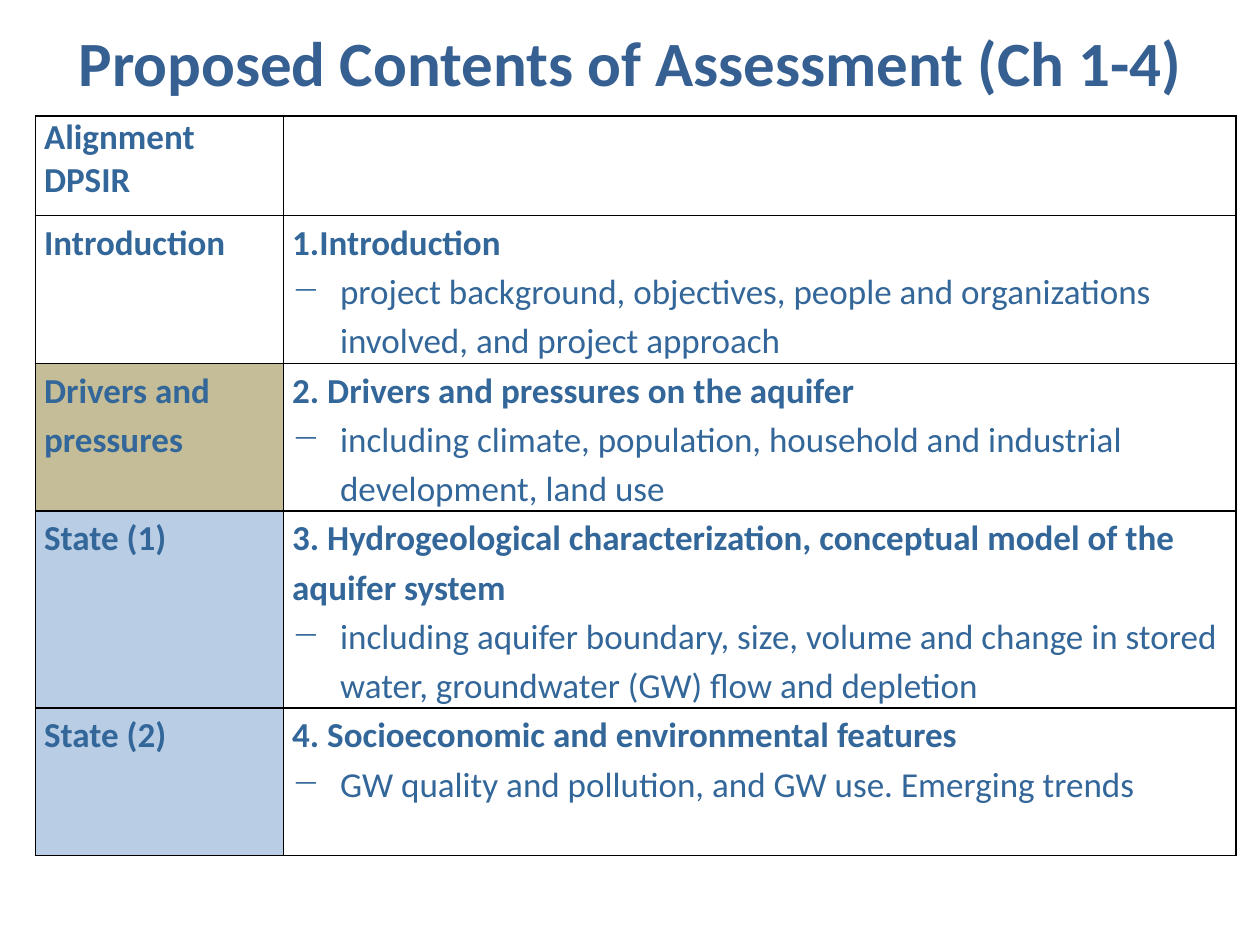
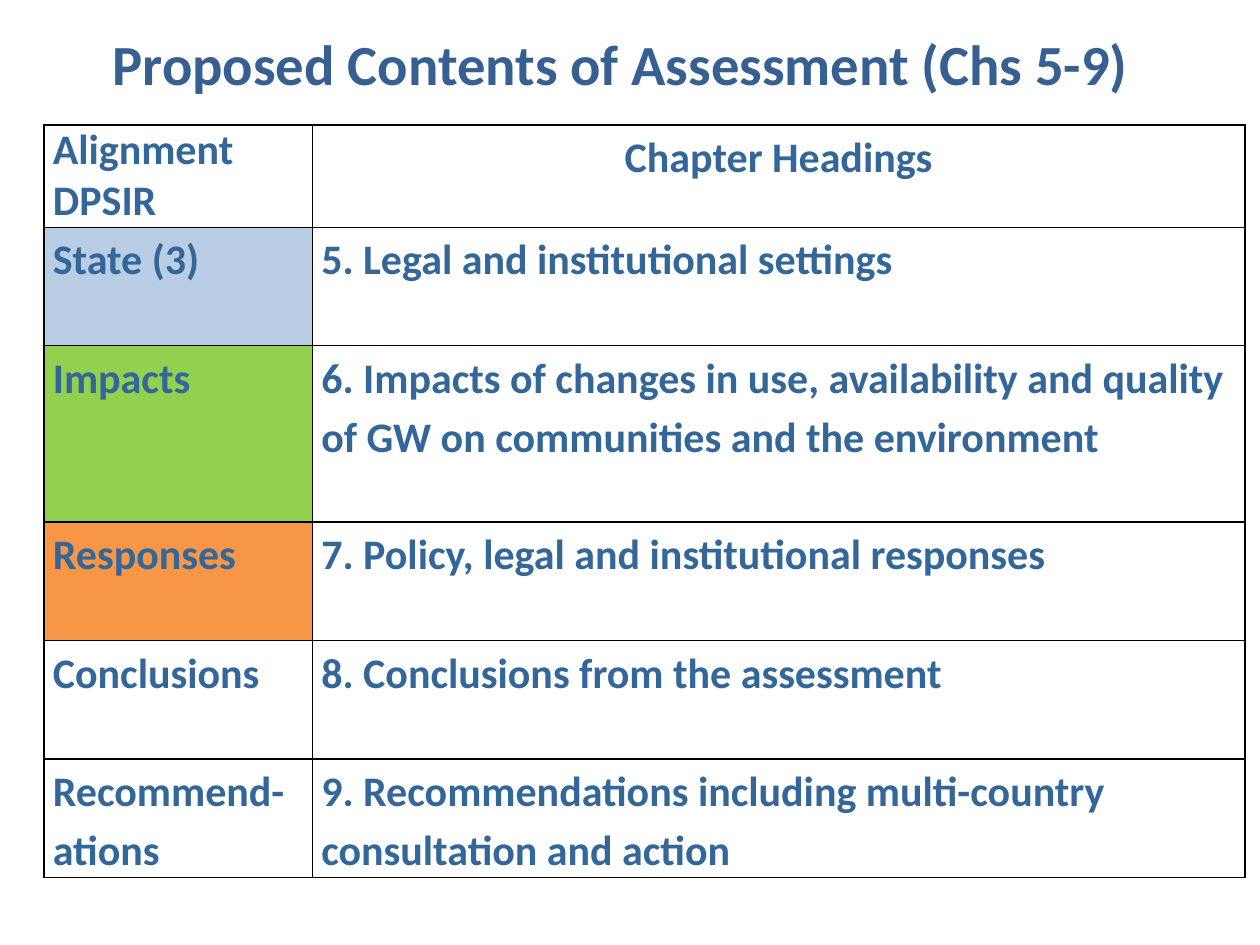
import pptx
import pptx.util
import pptx.dml.color
import pptx.enum.text
import pptx.oxml
from lxml import etree

Inches, Pt = pptx.util.Inches, pptx.util.Pt
RGB = pptx.dml.color.RGBColor.from_string
ALIGN = pptx.enum.text.PP_ALIGN
ANCHOR = pptx.enum.text.MSO_ANCHOR
NS = "http://schemas.openxmlformats.org/drawingml/2006/main"

THEME = {
    "font": "Calibri", "title": "376092", "text": "336699", "line": "000000",
    "driver": "C4BD97", "state": "B9CDE5", "impact": "92D050", "response": "F79646",
    "spacing": 1.15, "indent": 0.38, "inset": 0.07,
}

# Each row: height, fill, label, chapter heading, detail
PAGES = [
    {
        "title": "Proposed Contents of Assessment (Ch 1-4)",
        "place": (0.51, -0.01), "title_size": 36, "size": 20,
        "table": (0.28, 0.92), "cols": (1.97, 7.56),
        "rows": [
            (0.79, None, "Alignment DPSIR", "", ""),
            (1.17, None, "Introduction", "1.Introduction",
             "project background, objectives, people and organizations involved, "
             "and project approach"),
            (1.17, "driver", "Drivers and pressures",
             "2. Drivers and pressures on the aquifer",
             "including climate, population, household and industrial development, land use"),
            (1.56, "state", "State (1)",
             "3. Hydrogeological characterization, conceptual model of the aquifer system",
             "including aquifer boundary, size, volume and change in stored water, "
             "groundwater (GW) flow and depletion"),
            (1.17, "state", "State (2)", "4. Socioeconomic and environmental features",
             "GW quality and pollution, and GW use. Emerging trends"),
        ],
    },
    {
        "title": "Proposed Contents of Assessment (Chs 5-9)",
        "place": (0.43, 0), "title_size": 32.4, "size": 24,
        "table": (0.35, 0.99), "cols": (2.13, 7.4),
        "rows": [
            (0.81, None, "Alignment DPSIR", "Chapter Headings", ""),
            (0.94, "state", "State (3)", "5. Legal and institutional settings", ""),
            (1.4, "impact", "Impacts",
             "6. Impacts of changes in use, availability and quality of GW "
             "on communities and the environment", ""),
            (0.94, "response", "Responses", "7. Policy, legal and institutional responses", ""),
            (0.94, None, "Conclusions", "8. Conclusions from the assessment", ""),
            (0.94, None, "Recommend-ations",
             "9. Recommendations including multi-country consultation and action", ""),
        ],
    },
]


def write(para, text, size, color, bold=True):
    run = para.add_run()
    run.text = text
    run.font.name = THEME["font"]
    run.font.size = Pt(size)
    run.font.bold = bold
    run.font.color.rgb = RGB(THEME[color])


def frame(cell, fill):
    """Give a cell its borders, insets and fill."""
    props = cell._tc.get_or_add_tcPr()
    for side in ("lnL", "lnR", "lnT", "lnB"):
        props.append(pptx.oxml.parse_xml(
            f'<a:{side} xmlns:a="{NS}" w="12700"><a:solidFill>'
            f'<a:srgbClr val="{THEME["line"]}"/></a:solidFill></a:{side}>'))
    cell.margin_left = cell.margin_right = Inches(THEME["inset"])
    cell.margin_top = cell.margin_bottom = 0
    if fill:
        cell.fill.solid()
        cell.fill.fore_color.rgb = RGB(THEME[fill])
    else:
        cell.fill.background()


deck = pptx.Presentation()
deck.slide_width, deck.slide_height = Inches(10), Inches(7.5)

for page in PAGES:
    slide = deck.slides.add_slide(deck.slide_layouts[5])
    title = slide.shapes.title
    title.left, title.top = map(Inches, page["place"])
    title.width, title.height = Inches(8.99), Inches(0.99)
    title.text_frame.auto_size = pptx.enum.text.MSO_AUTO_SIZE.NONE
    title.text_frame.vertical_anchor = ANCHOR.MIDDLE
    para = title.text_frame.paragraphs[0]
    para.alignment = ALIGN.CENTER
    write(para, page["title"], page["title_size"], "title")

    rows, size = page["rows"], page["size"]
    left, top = map(Inches, page["table"])
    table = slide.shapes.add_table(
        len(rows), 2, left, top,
        Inches(sum(page["cols"])), Inches(sum(row[0] for row in rows))).table
    table.first_row = table.horz_banding = False
    for col, width in zip(table.columns, page["cols"]):
        col.width = Inches(width)

    for num, (height, fill, label, head, detail) in enumerate(rows):
        table.rows[num].height = Inches(height)
        for col, text in enumerate((label, head)):
            cell = table.cell(num, col)
            frame(cell, None if col else fill)
            if not text:
                continue
            para = cell.text_frame.paragraphs[0]
            if num or col:
                para.line_spacing = THEME["spacing"]
            if col and not num:
                para.alignment = ALIGN.CENTER
            write(para, text, size, "text")
        if detail:
            para = cell.text_frame.add_paragraph()
            para.line_spacing = THEME["spacing"]
            props = para._p.get_or_add_pPr()
            props.set("marL", str(Inches(THEME["indent"])))
            props.set("indent", str(-Inches(THEME["indent"])))
            etree.SubElement(props, f"{{{NS}}}buChar", char="−")
            write(para, detail, size, "text", bold=False)

deck.save("out.pptx")
